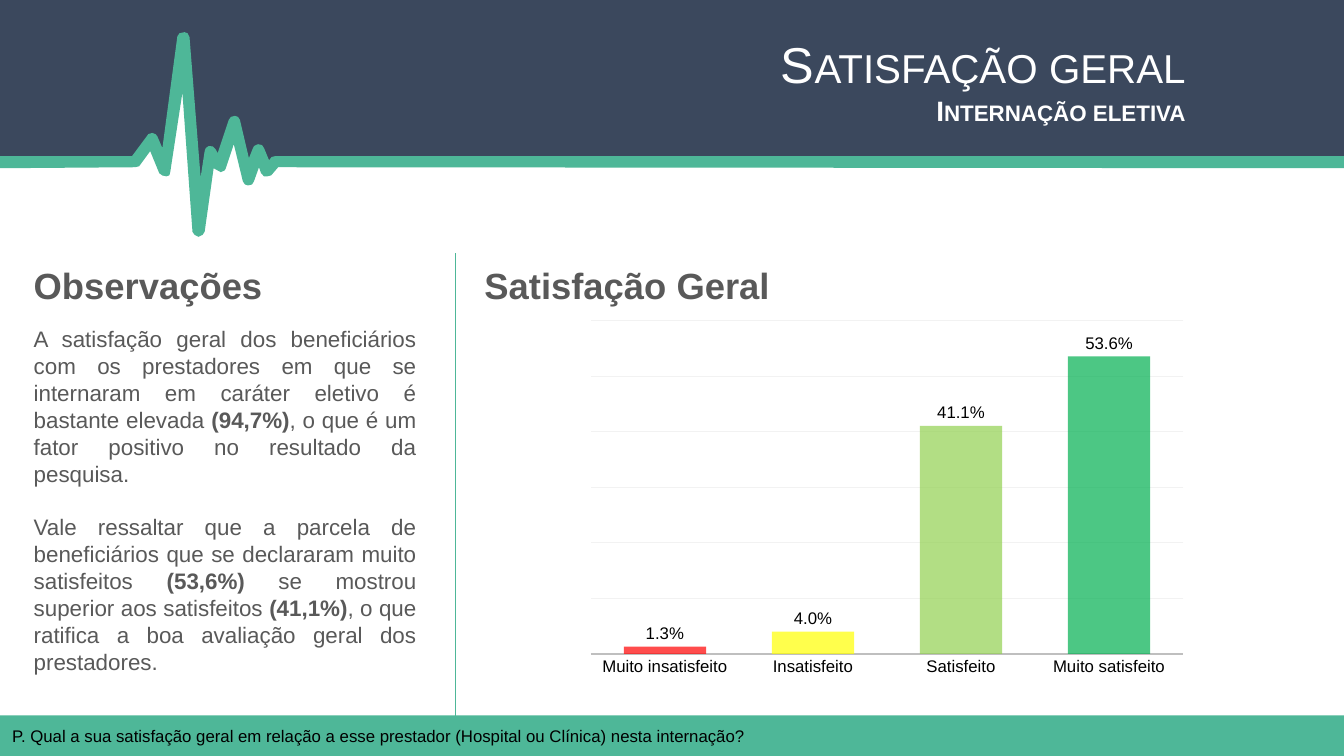
"""Build the slide on overall satisfaction with elective hospital stays."""
from dataclasses import dataclass

from lxml.etree import SubElement
from pptx import Presentation
from pptx.chart.data import CategoryChartData
from pptx.dml.color import RGBColor
from pptx.enum.chart import XL_CHART_TYPE, XL_LABEL_POSITION, XL_TICK_MARK
from pptx.enum.shapes import MSO_CONNECTOR, MSO_SHAPE
from pptx.enum.text import MSO_AUTO_SIZE, PP_ALIGN
from pptx.oxml.ns import qn
from pptx.util import Pt


@dataclass(frozen=True)
class Theme:
    font: str = "Arial"
    navy: str = "3B485D"
    green: str = "4EB798"
    gray: str = "595959"
    white: str = "FFFFFF"
    black: str = "000000"
    axis: str = "BFBFBF"
    grid: str = "F2F2F2"
    bars: tuple = ("FF0000", "FFFF00", "92D050", "00B050")
    alpha: int = 70
    title: int = 36
    head: int = 26
    sub: int = 20
    body: int = 16
    small: int = 12


theme = Theme()


def style(font, size, color, bold=False):
    font.name, font.size, font.bold = theme.font, Pt(size), bold
    font.color.rgb = RGBColor.from_string(color)


def write(area, lines, size, color, bold=False, align=PP_ALIGN.LEFT):
    frame = slide.shapes.add_textbox(*map(Pt, area)).text_frame
    frame.word_wrap = True
    frame.auto_size = MSO_AUTO_SIZE.SHAPE_TO_FIT_TEXT
    frame.text = "\n".join(lines)
    for para in frame.paragraphs:
        parts = para.text.split("*")
        para.text = parts[0]
        for part in parts[1:]:
            para.add_run().text = part
        para.alignment = align
        for spot, run in enumerate(para.runs):
            style(run.font, size, color, bold or spot % 2 == 1)
    return frame


deck = Presentation()
deck.slide_width, deck.slide_height = Pt(960), Pt(540)
slide = deck.slides.add_slide(deck.slide_layouts[6])

header = [
    (960, 0), (0, 0), (0, 116), (96.5, 115), (109.5, 101.5), (116.5, 120),
    (130.5, 53.5), (142, 147), (150, 111.5), (157, 119), (166.5, 90.5),
    (177, 126.5), (186, 110), (191, 121.5), (198, 115), (960, 116),
]
pulse = [
    (960, 111.6), (196.5, 111.6), (194, 112.2), (192.2, 114.5),
    (188.6, 105.8), (187.2, 103.7), (184.3, 103), (181.5, 104.4),
    (180.7, 105.8), (177.8, 113), (171.4, 85.7), (170, 83.5), (167.8, 82.8),
    (165, 83.5), (163.4, 85.7), (155.5, 109.4), (154, 106.6), (152, 104.6),
    (149, 104.4), (147, 105.8), (146.2, 108), (143.3, 126.7), (135.4, 26.6),
    (134, 23.8), (131.8, 23), (128.2, 23.8), (126.7, 26), (116, 105.8),
    (112.3, 97.2), (111, 95.8), (108.7, 95), (106, 95.8), (94.3, 111.6),
    (0, 111.6), (0, 120.2), (96.5, 119.5), (99.4, 118.8), (107.3, 108),
    (113.8, 123.8), (116, 125.4), (118.8, 126), (121, 125.3), (121.7, 122.4),
    (130.3, 66.2), (137.5, 165.6), (139, 167.8), (141.8, 169.2),
    (144.7, 167.8), (146.2, 165.6), (152.6, 120.2), (154, 121), (157.7, 123),
    (160.6, 121.7), (161.3, 120.2), (167, 103), (173.5, 129.6), (175, 131.8),
    (177.1, 132.5), (180, 131.8), (181.4, 129.6), (185, 119.5),
    (186.5, 123.8), (188.6, 126), (191, 126), (193.7, 125.3),
    (198.7, 119.5), (960, 120.2),
]
shapes = []
for points, color in ((header, theme.navy), (pulse, theme.green)):
    first, *rest = [(Pt(x), Pt(y)) for x, y in points]
    form = slide.shapes.build_freeform(*first)
    form.add_line_segments(rest)
    shapes.append((form.convert_to_shape(), color))
band = slide.shapes.add_shape(MSO_SHAPE.RECTANGLE, Pt(0), Pt(511), Pt(960), Pt(29))
shapes.append((band, theme.green))
for shape, color in shapes:
    shape.shadow.inherit = False
    shape.fill.solid()
    shape.fill.fore_color.rgb = RGBColor.from_string(color)
    shape.line.fill.background()

title = write((177, 20, 677, 75), ["Satisfação geral", "Internação eletiva"],
              theme.title, theme.white, align=PP_ALIGN.RIGHT)
style(title.paragraphs[1].runs[0].font, theme.sub, theme.white, True)
for para in title.paragraphs:
    para.runs[0].font._element.set("cap", "small")

write((1.5, 515, 650, 22),
      ["P. Qual a sua satisfação geral em relação a esse prestador "
       "(Hospital ou Clínica) nesta internação?"], theme.small, theme.black)
for left, text in ((17, "Observações"), (339, "Satisfação Geral")):
    write((left, 184.5, 302, 39), [text], theme.head, theme.gray, True)
notes = write((17, 229, 287.5, 220), [
    "A satisfação geral dos beneficiários com os prestadores em que se "
    "internaram em caráter eletivo é bastante elevada *(94,7%)*, o que é um "
    "fator positivo no resultado da pesquisa.",
    "Vale ressaltar que a parcela de beneficiários que se declararam muito "
    "satisfeitos *(53,6%)* se mostrou superior aos satisfeitos *(41,1%)*, "
    "o que ratifica a boa avaliação geral dos prestadores.",
], theme.body, theme.gray, align=PP_ALIGN.JUSTIFY)
notes.paragraphs[1].space_before = Pt(19)

rule = slide.shapes.add_connector(
    MSO_CONNECTOR.STRAIGHT, Pt(325.2), Pt(181), Pt(325.2), Pt(518))
rule.line.width = Pt(1)
rule.line.color.rgb = RGBColor.from_string(theme.green)
SubElement(rule._element.spPr, qn("a:effectLst"))

data = CategoryChartData(number_format="0.0%")
data.categories = ["Muito insatisfeito", "Insatisfeito", "Satisfeito", "Muito satisfeito"]
data.add_series("Series 1", (0.013, 0.04, 0.411, 0.536))
chart = slide.shapes.add_chart(
    XL_CHART_TYPE.COLUMN_CLUSTERED, Pt(413.3), Pt(224), Pt(440.6), Pt(264), data).chart
chart.has_legend = chart.has_title = False
style(chart.font, theme.small, theme.black)

names = chart.category_axis
names.major_tick_mark = XL_TICK_MARK.NONE
names.format.line.width = Pt(1.25)
names.format.line.color.rgb = RGBColor.from_string(theme.axis)
style(names.tick_labels.font, theme.small, theme.black)

scale = chart.value_axis
scale.visible = False
scale.minimum_scale, scale.maximum_scale, scale.major_unit = 0, 0.6, 0.1
scale.major_gridlines.format.line.width = Pt(0.75)
scale.major_gridlines.format.line.color.rgb = RGBColor.from_string(theme.grid)

plot = chart.plots[0]
plot.gap_width, plot.overlap, plot.vary_by_categories = 80, 25, False
plot.has_data_labels = True
labels = plot.data_labels
labels.show_value = True
labels.number_format, labels.number_format_is_linked = "0.0%", False
labels.position = XL_LABEL_POSITION.OUTSIDE_END
style(labels.font, theme.small, theme.black)

for spot, color in enumerate(theme.bars):
    bar = plot.series[0].points[spot].format
    bar.fill.solid()
    bar.fill.fore_color.rgb = RGBColor.from_string(color)
    bar.line.fill.background()
    for tint in bar._element.iter(qn("a:srgbClr")):
        SubElement(tint, qn("a:alpha"), val=str(theme.alpha * 1000))

deck.save("out.pptx")
